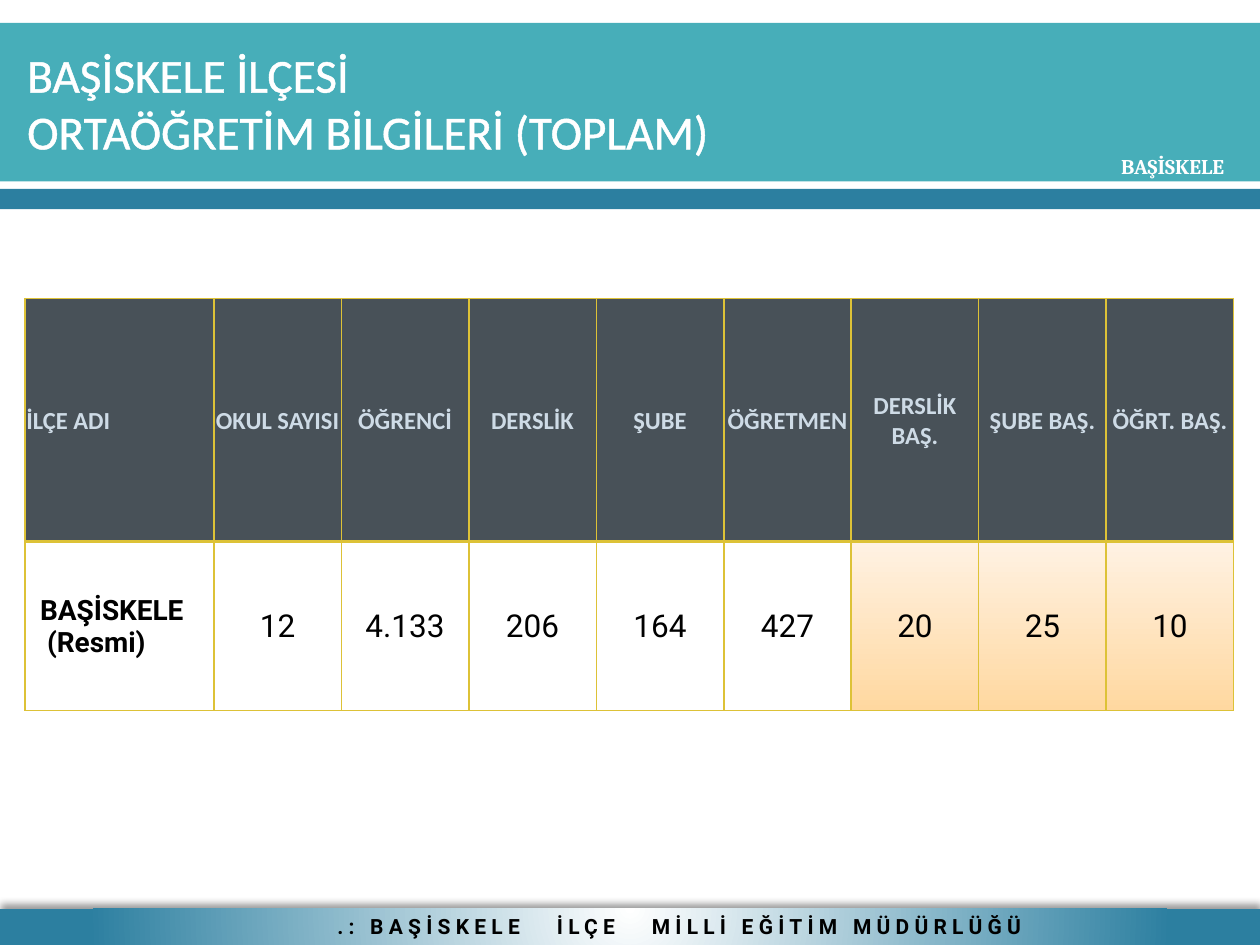
from dataclasses import dataclass

from pptx import Presentation
from pptx import util as u
from pptx.dml.color import RGBColor
from pptx.enum import shapes, text
from pptx.oxml import parse_xml
from pptx.oxml.ns import nsdecls, qn

WHITE, BLACK, TEAL, BLUE = "FFFFFF", "000000", "47AEB9", "2C7FA0"
SLATE, PALE, GOLD = "485158", "CEDBE6", "DDC237"
PEACH = ("FFD8A0", "FFF2E3")


@dataclass
class Band:
    top: float
    height: float
    color: str


@dataclass
class Column:
    head: str
    value: str
    shaded: bool = False


BANDS = [Band(0.46, 3.2, TEAL), Band(3.81, 0.41, BLUE), Band(18.32, 0.73, BLUE)]
COLUMNS = [
    Column("OKUL SAYISI", "12"),
    Column("ÖĞRENCİ", "4.133"),
    Column("DERSLİK", "206"),
    Column("ŞUBE", "164"),
    Column("ÖĞRETMEN", "427"),
    Column("DERSLİK BAŞ.", "20", True),
    Column("ŞUBE BAŞ.", "25", True),
    Column("ÖĞRT. BAŞ.", "10", True),
]


def rgb(color: str) -> RGBColor:
    return RGBColor.from_string(color)


def xml(tag: str, attrs: str = "", body: str = ""):
    return parse_xml(f"<a:{tag} {nsdecls('a')} {attrs}>{body}</a:{tag}>")


def solid(color: str) -> str:
    return f'<a:solidFill><a:srgbClr val="{color}"/></a:solidFill>'


def write(p, content: str, *, size: float, font: str, color: str, bold: bool = False,
          spacing: float = 0, outline: float = 0) -> None:
    r = p.add_run()
    r.text = content
    r.font.size, r.font.name, r.font.bold = u.Pt(size), font, bold
    r.font.color.rgb = rgb(color)
    rpr = r.font._element
    if spacing:
        rpr.set("spc", str(int(spacing * 100)))
    if outline:
        rpr.insert(0, xml("ln", f'w="{u.Pt(outline)}"', solid(color)))


def add_box(s, left: float, top: float, width: float, height: float):
    tf = s.shapes.add_textbox(u.Cm(left), u.Cm(top), u.Cm(width), u.Cm(height)).text_frame
    tf.word_wrap = True
    return tf


def add_band(s, band: Band):
    sp = s.shapes.add_shape(shapes.MSO_SHAPE.RECTANGLE, 0, u.Cm(band.top),
                            u.Cm(25.4), u.Cm(band.height))
    sp.shadow.inherit = False
    sp.fill.solid()
    sp.fill.fore_color.rgb = rgb(band.color)
    sp.line.fill.background()
    return sp


def set_gradient(fill, colors: tuple[str, str], end: float = 1) -> None:
    fill.gradient()
    for stop, color, position in zip(fill.gradient_stops, colors, (0, end)):
        stop.color.rgb = rgb(color)
        stop.position = position


def add_glow(sp) -> None:
    set_gradient(sp.fill, (WHITE, BLUE), 0.86)
    spr = sp._element.spPr
    lin = spr.find(qn("a:gradFill")).find(qn("a:lin"))
    lin.getparent().replace(lin, xml(
        "path", 'path="circle"', '<a:fillToRect l="50000" t="-80000" r="50000" b="180000"/>'))
    spr.find(qn("a:effectLst")).append(xml(
        "outerShdw", f'blurRad="{u.Pt(4)}" dist="{u.Pt(3)}" dir="16200000" rotWithShape="0"',
        f'<a:srgbClr val="{BLACK}"><a:alpha val="40000"/></a:srgbClr>'))


def format_cell(cell, top: float, bottom: float) -> None:
    cell.vertical_anchor = text.MSO_ANCHOR.MIDDLE
    cell.margin_left = cell.margin_right = cell.margin_top = u.Cm(0.03)
    cell.margin_bottom = 0
    tcpr = cell._tc.get_or_add_tcPr()
    for i, (side, width) in enumerate(zip("LRTB", (1, 1, top, bottom))):
        tcpr.insert(i, xml(f"ln{side}", f'w="{u.Pt(width)}"', solid(GOLD)))


def add_school_table(s) -> None:
    table = s.shapes.add_table(2, len(COLUMNS) + 1, u.Cm(0.5), u.Cm(6.02),
                               u.Cm(24.37), u.Cm(8.3)).table
    table.first_row = table.horz_banding = False
    for row, height in zip(table.rows, (4.9, 3.4)):
        row.height = u.Cm(height)
    for i, column in enumerate([Column("İLÇE ADI", "")] + COLUMNS):
        table.columns[i].width = u.Cm(2.57 if i else 3.81)
        head, value = table.cell(0, i), table.cell(1, i)
        head.fill.solid()
        head.fill.fore_color.rgb = rgb(SLATE)
        if column.shaded:
            set_gradient(value.fill, PEACH)
            value.fill.gradient_angle = 90
        else:
            value.fill.background()
        format_cell(head, 1, 2)
        format_cell(value, 2, 1)
        p = head.text_frame.paragraphs[0]
        write(p, column.head, size=14, font="Calibri", color=PALE, bold=True)
        if i:
            p.alignment = text.PP_ALIGN.CENTER
            p = value.text_frame.paragraphs[0]
            p.alignment = text.PP_ALIGN.CENTER
            write(p, column.value, size=18, font="Roboto", color=BLACK)
    tf = table.cell(1, 0).text_frame
    tf.add_paragraph()
    for p, line, indent in zip(tf.paragraphs, ("BAŞİSKELE", "(Resmi)"), (0.28, 0.42)):
        p._p.get_or_add_pPr().set("marL", str(u.Cm(indent)))
        write(p, line, size=16, font="Roboto", color=BLACK, bold=True)


def main() -> None:
    prs = Presentation()
    prs.slide_width, prs.slide_height = u.Cm(25.4), u.Cm(19.05)
    s = prs.slides.add_slide(prs.slide_layouts[6])
    footer_band = [add_band(s, band) for band in BANDS][-1]
    add_glow(footer_band)

    p = add_box(s, 22.35, 2.97, 2.67, 0.76).paragraphs[0]
    write(p, "BAŞİSKELE", size=12, font="Cambria", color=WHITE, bold=True)

    p = add_box(s, 6.55, 18.29, 14.6, 0.76).paragraphs[0]
    for part in (".: BAŞİSKELE", " ", "İLÇE", " ", "MİLLİ EĞİTİM MÜDÜRLÜĞÜ"):
        write(p, part, size=12, font="Roboto", color=BLACK, bold=True,
              spacing=15 if part == " " else 3)

    tf = add_box(s, 0.3, 0.51, 21.8, 3.1)
    tf.vertical_anchor = text.MSO_ANCHOR.MIDDLE
    p = tf.paragraphs[0]
    title = dict(size=27, font="Calibri", color=WHITE, outline=1.1)
    write(p, "BAŞİSKELE İLÇESİ", **title)
    p.add_line_break()
    write(p, "ORTAÖĞRETİM BİLGİLERİ (TOPLAM)", **title)

    add_school_table(s)
    prs.save("out.pptx")


if __name__ == "__main__":
    main()
